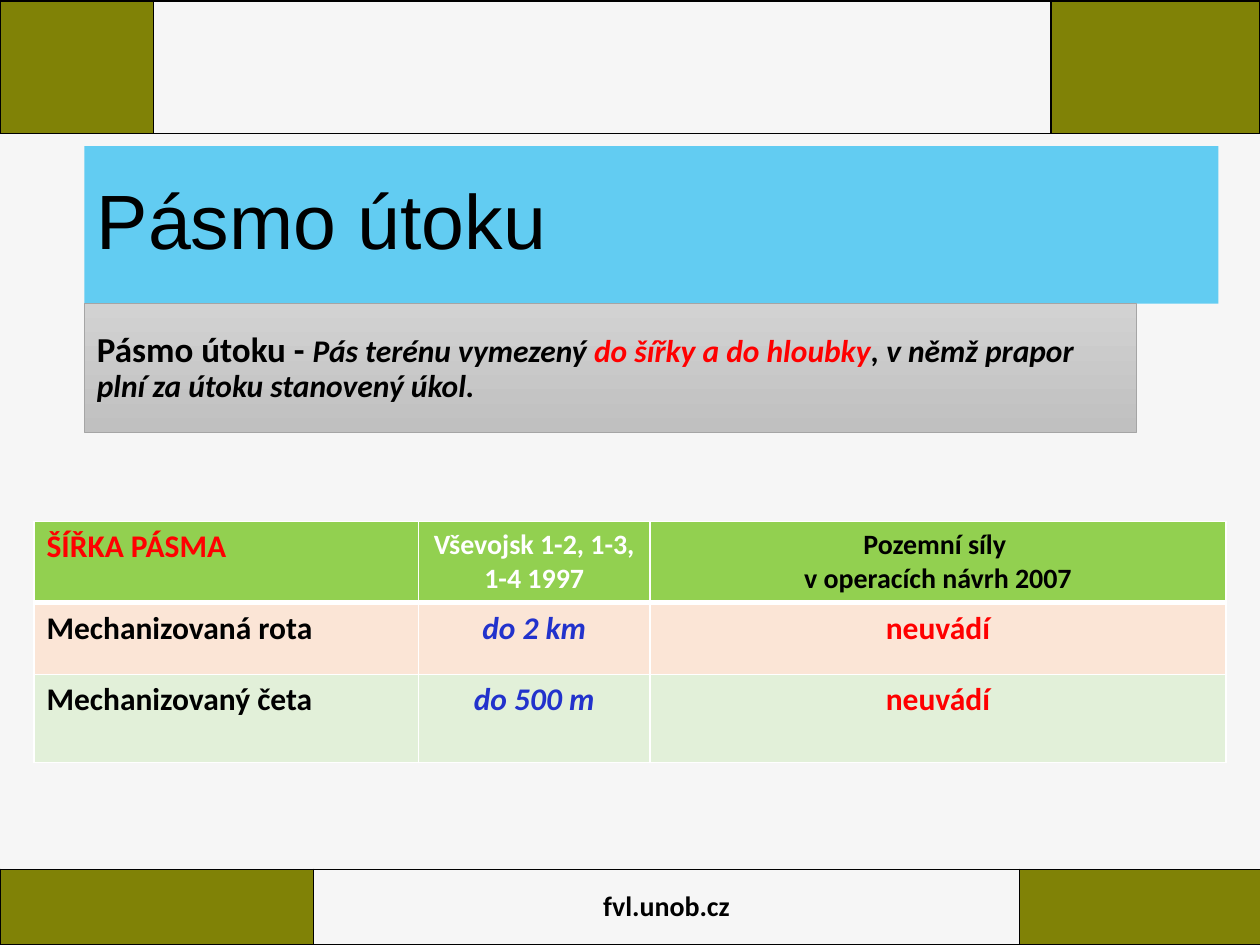
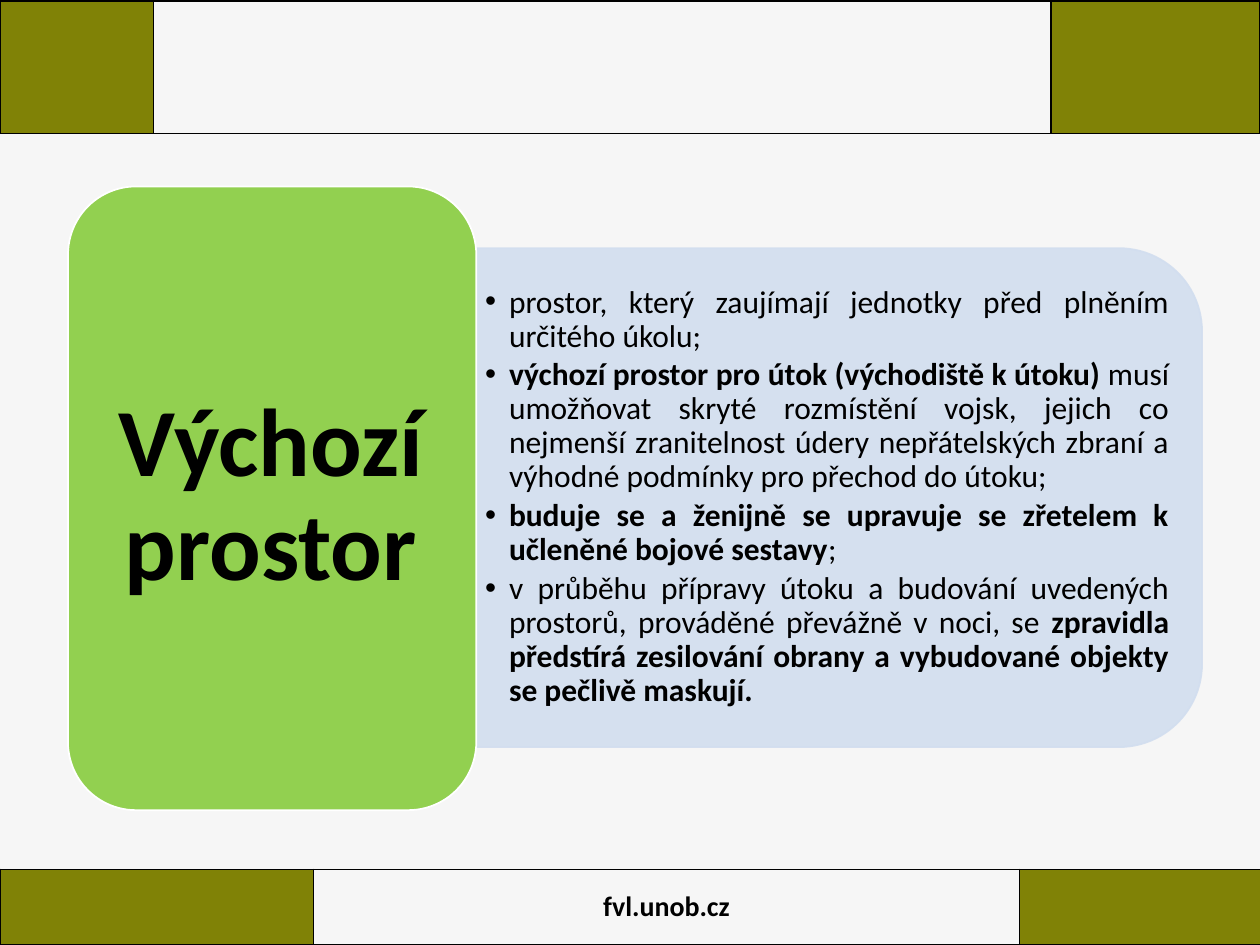
from lxml import etree
from pptx import Presentation
from pptx import util as u
from pptx.dml.color import RGBColor
from pptx.enum import shapes, text
from pptx.oxml.ns import qn

COLORS = {
    "page": "F6F6F6", "olive": "808206", "black": "000000", "white": "FFFFFF",
    "sky": "00B0F0", "green": "92D050", "peach": "FBE5D6", "mint": "E2F0D9",
    "red": "FF0000", "blue": "2232CC", "panel": "D2DEEF",
    "grey_top": "D2D2D2", "grey_bottom": "C0C0C0", "grey_line": "A5A5A5",
}
LEFT, CENTER, JUSTIFY = (text.PP_ALIGN.LEFT, text.PP_ALIGN.CENTER,
                         text.PP_ALIGN.JUSTIFY)
TOP, MIDDLE = text.MSO_ANCHOR.TOP, text.MSO_ANCHOR.MIDDLE
INSETS = (0.1, 0.05, 0.1, 0.05)
SIDES = ("left", "top", "right", "bottom")


def rgb(name):
    return RGBColor.from_string(COLORS[name])


def sub(parent, tag, **attrs):
    return etree.SubElement(parent, qn(tag), attrs)


class Deck:
    """Holds the shared style and the current slide."""

    def __init__(self):
        self.prs = Presentation()
        self.prs.slide_width = u.Inches(10)
        self.prs.slide_height = u.Inches(7.5)
        self.s = None

    def new_slide(self):
        self.s = self.prs.slides.add_slide(self.prs.slide_layouts[6])
        self.paint(self.s.background.fill, "page")
        # Footer and header bands
        site = ([[("fvl.unob.cz", {"size": 16, "bold": True})]], CENTER, MIDDLE)
        blank = ([], LEFT, TOP)
        fills = [["olive", None, "olive"]]
        self.table((0, 6.9), [2.49, 5.6, 1.92], [0.6],
                   [[blank, site, blank]], fills, "black")
        self.table((0, 0.01), [1.22, 7.12, 1.66], [1.05],
                   [[blank] * 3], fills, "black")

    def paint(self, fill, color, alpha=None):
        fill.solid()
        fill.fore_color.rgb = rgb(color)
        if alpha:
            solid = fill._xPr.find(qn("a:solidFill"))
            sub(solid[0], "a:alpha", val=str(alpha * 1000))

    def paragraph(self, p, runs, align=LEFT, spacing=None, after=None,
                  bullet=None):
        form = {"alignment": align, "line_spacing": spacing,
                "space_after": u.Pt(after) if after else None}
        for name, value in form.items():
            if value is not None:
                setattr(p, name, value)
        if bullet:
            pPr = p._p.get_or_add_pPr()
            pPr.set("marL", str(u.Inches(bullet)))
            pPr.set("indent", str(-u.Inches(bullet)))
            sub(pPr, "a:buFont", typeface="Arial")
            sub(pPr, "a:buChar", char="•")
        for words, style in runs:
            r = p.add_run()
            r.text = words
            form = {"name": "Calibri", "size": 18, "bold": False,
                    "italic": False, "color": "black", **style}
            r.font.color.rgb = rgb(form.pop("color"))
            form["size"] = u.Pt(form["size"])
            for name, value in form.items():
                setattr(r.font, name, value)

    def fill_text(self, tf, paragraphs, insets=INSETS, **form):
        tf.word_wrap = True
        tf.vertical_anchor = MIDDLE
        for side, value in zip(SIDES, insets):
            setattr(tf, "margin_" + side, u.Inches(value))
        self.paragraphs(tf, paragraphs, **form)

    def paragraphs(self, tf, paragraphs, **form):
        for i, runs in enumerate(paragraphs):
            p = tf.add_paragraph() if i else tf.paragraphs[0]
            self.paragraph(p, runs, **form)

    def shape(self, kind, box, fill=None, line=None, width=1, alpha=None):
        sp = self.s.shapes.add_shape(kind, *map(u.Inches, box))
        sp.shadow.inherit = False
        if fill:
            self.paint(sp.fill, fill, alpha)
        if line:
            self.paint(sp.line.fill, line, alpha)
            sp.line.width = u.Pt(width)
        else:
            sp.line.fill.background()
        return sp

    def textbox(self, box, paragraphs, insets, **form):
        sp = self.s.shapes.add_textbox(*map(u.Inches, box))
        self.fill_text(sp.text_frame, paragraphs, insets, **form)

    def title(self, words):
        sp = self.shape(shapes.MSO_SHAPE.RECTANGLE, (0.67, 1.16, 9, 1.25),
                        "sky", alpha=60)
        style = {"name": "Arial", "size": 44}
        self.fill_text(sp.text_frame, [[(words, style)]], spacing=0.9)

    def borders(self, cell, color, bottom):
        tcPr = cell._tc.get_or_add_tcPr()
        for i, side in enumerate("LRTB"):
            width = bottom if side == "B" else 1
            ln = etree.Element(qn("a:ln" + side), w=str(u.Pt(width)))
            sub(sub(ln, "a:solidFill"), "a:srgbClr", val=COLORS[color])
            tcPr.insert(i, ln)

    def table(self, at, cols, rows, cells, fills, border, header_rule=1):
        size = sum(cols), sum(rows)
        t = self.s.shapes.add_table(len(rows), len(cols),
                                    *map(u.Inches, at + size)).table
        t.first_row = t.horz_banding = False
        for col, width in zip(t.columns, cols):
            col.width = u.Inches(width)
        for i, height in enumerate(rows):
            t.rows[i].height = u.Inches(height)
            for j, (paragraphs, align, anchor) in enumerate(cells[i]):
                cell = t.cell(i, j)
                cell.vertical_anchor = anchor
                self.paragraphs(cell.text_frame, paragraphs, align=align)
                if fills[i][j]:
                    self.paint(cell.fill, fills[i][j])
                else:
                    cell.fill.background()
                self.borders(cell, border, 1 if i else header_rule)


def attack_zone(d):
    d.new_slide()
    d.title("Pásmo útoku")

    # Widths by unit
    def heading(color, *lines):
        style = {"size": 16, "bold": True, "color": color}
        return [[(line, style)] for line in lines], CENTER, MIDDLE

    def entry(words, align=CENTER, **style):
        return [[(words, {"bold": True, **style})]], align, TOP

    cells = [[entry("ŠÍŘKA PÁSMA", LEFT, color="red"),
              heading("white", "Vševojsk 1-2, 1-3, 1-4 1997"),
              heading("black", "Pozemní síly ", "v operacích návrh 2007")]]
    for unit, width in (("Mechanizovaná rota", "do 2 km"),
                        ("Mechanizovaný četa", "do 500 m")):
        cells.append([entry(unit, LEFT),
                      entry(width, color="blue", italic=True),
                      entry("neuvádí", color="red")])
    fills = [[name] * 3 for name in ("green", "peach", "mint")]
    d.table((0.27, 4.14), [3.05, 1.84, 4.57], [0.63, 0.57, 0.7],
            cells, fills, "white", header_rule=3)

    # Definition
    sp = d.shape(shapes.MSO_SHAPE.RECTANGLE, (0.67, 2.41, 8.35, 1.02),
                 line="grey_line", width=0.5)
    sp.fill.gradient()
    sp.fill.gradient_angle = 270
    for stop, name in zip(sp.fill.gradient_stops, ("grey_top", "grey_bottom")):
        stop.color.rgb = rgb(name)
    bold = {"bold": True}
    slanted = {"bold": True, "italic": True}
    d.fill_text(sp.text_frame, [[
        ("Pásmo útoku - ", {**bold, "size": 20}),
        ("Pás terénu vymezený ", slanted),
        ("do šířky a do hloubky", {**slanted, "color": "red"}),
        (", v němž prapor plní za útoku stanovený úkol.", slanted),
    ]], spacing=0.9)


def assembly_area(d):
    d.new_slide()
    bold = {"bold": True}

    # Description panel
    sp = d.shape(shapes.MSO_SHAPE.ROUND_2_SAME_RECTANGLE,
                 (4.68, 1.07, 3.96, 5.76), "panel", "panel", alpha=90)
    sp.rotation = 90
    d.textbox((3.78, 2.16, 5.57, 3.57), [
        [("prostor, který zaujímají jednotky před plněním určitého úkolu;", {})],
        [("výchozí prostor pro útok (východiště k útoku)", bold),
         (" musí umožňovat skryté rozmístění vojsk, jejich co nejmenší "
          "zranitelnost údery nepřátelských zbraní a výhodné podmínky pro "
          "přechod do útoku; ", {})],
        [("buduje se a ženijně se upravuje se zřetelem k učleněné bojové "
          "sestavy", bold), (";", {})],
        [("v průběhu přípravy útoku a budování uvedených prostorů, prováděné "
          "převážně v noci, se ", {}),
         ("zpravidla předstírá zesilování obrany a vybudované objekty se "
          "pečlivě maskují.", bold)],
    ], (0.07, 0.04, 0.07, 0.04), align=JUSTIFY, spacing=0.9, after=2.7,
        bullet=0.19)

    # Term
    d.shape(shapes.MSO_SHAPE.ROUNDED_RECTANGLE, (0.54, 1.48, 3.24, 4.95),
            "green", "white")
    d.textbox((0.69, 1.63, 2.92, 4.63),
              [[("Výchozí prostor", {**bold, "size": 55})]],
              (0.23, 0.11, 0.23, 0.11), align=CENTER, spacing=0.9)


def main():
    d = Deck()
    attack_zone(d)
    assembly_area(d)
    d.prs.save("out.pptx")


if __name__ == "__main__":
    main()
